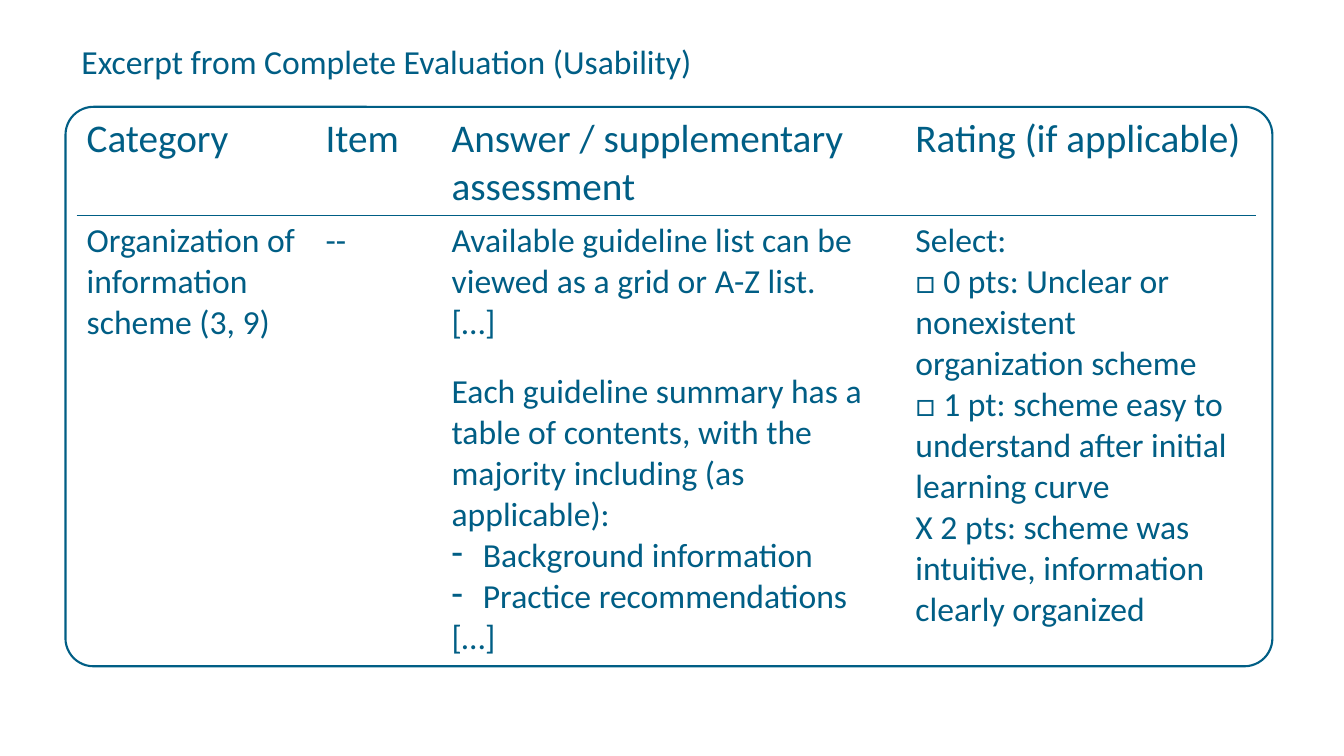
import pptx
import pptx.dml.color
import pptx.enum.shapes
import pptx.enum.text
import pptx.oxml
import pptx.oxml.ns
import pptx.util
from lxml import etree

Inches, Pt = pptx.util.Inches, pptx.util.Pt
COLORS = {"teal": "005E85"}
FONT = "Calibri"
NO_GRID_STYLE = "{2D5ABB26-0587-4C30-8999-92F81FD0307C}"
COLUMN_WIDTHS = [2.37, 1.25, 4.6, 3.48]
ROW_HEIGHTS = [1.02, 4.46]
TEXT_SIZES = [28, 24]
SECTION_GAP = {"space_before": Pt(20)}
HEADERS = ["Category", "Item", "Answer / supplementary assessment", "Rating (if applicable)"]
EVALUATION = [
    ["Organization of information scheme (3, 9)"],
    ["--"],
    [
        "Available guideline list can be viewed as a grid or A-Z list.",
        "[…]",
        ("Each guideline summary has a table of contents, with the majority "
         "including (as applicable):", SECTION_GAP),
        "- Background information",
        "- Practice recommendations",
        "[…]",
    ],
    [
        "Select:",
        "□ 0 pts: Unclear or nonexistent organization scheme",
        "□ 1 pt: scheme easy to understand after initial learning curve",
        "X 2 pts: scheme was intuitive, information clearly organized",
    ],
]


def rgb(name):
    return pptx.dml.color.RGBColor.from_string(COLORS[name])


def set_attributes(target, values):
    for name, value in values.items():
        setattr(target, name, value)


def add_dash_bullet(paragraph):
    properties = paragraph._p.get_or_add_pPr()
    properties.set("marL", str(Inches(0.31)))
    properties.set("indent", str(-Inches(0.31)))
    bullet = etree.SubElement(properties, pptx.oxml.ns.qn("a:buChar"))
    bullet.set("char", "-")


def write_paragraphs(text_frame, entries, size):
    """Write entries, each a string or a (string, paragraph format) pair."""
    for index, entry in enumerate(entries):
        text, formats = entry if isinstance(entry, tuple) else (entry, {})
        paragraph = text_frame.add_paragraph() if index else text_frame.paragraphs[0]
        set_attributes(paragraph, formats)
        if text.startswith("- "):
            add_dash_bullet(paragraph)
            text = text[2:]
        run = paragraph.add_run()
        run.text = text
        set_attributes(run.font, {"name": FONT, "size": Pt(size)})
        run.font.color.rgb = rgb("teal")


def add_cell_border(cell, side):
    """Draw one edge of a cell; side is lnT or lnB."""
    border = pptx.oxml.parse_xml(
        f'<a:{side} {pptx.oxml.ns.nsdecls("a")} w="{Pt(1)}"><a:solidFill>'
        f'<a:srgbClr val="{COLORS["teal"]}"/></a:solidFill></a:{side}>'
    )
    cell._tc.get_or_add_tcPr().insert(0, border)


def add_title(slide, left, top, width, height):
    frame = slide.shapes.add_textbox(
        Inches(left), Inches(top), Inches(width), Inches(height)).text_frame
    set_attributes(frame, {
        "word_wrap": True,
        "vertical_anchor": pptx.enum.text.MSO_ANCHOR.TOP,
    })
    title = "Excerpt from Complete Evaluation (Usability)"
    write_paragraphs(frame, [(title, {"line_spacing": 0.9})], 24)


def add_evaluation_table(slide, left, top):
    graphic_frame = slide.shapes.add_table(
        len(ROW_HEIGHTS), len(COLUMN_WIDTHS), Inches(left), Inches(top),
        Inches(sum(COLUMN_WIDTHS)), Inches(sum(ROW_HEIGHTS)))
    table = graphic_frame.table
    set_attributes(table, {"first_row": False, "horz_banding": False})
    table._tbl.tblPr.find(pptx.oxml.ns.qn("a:tableStyleId")).text = NO_GRID_STYLE
    for column, width in zip(table.columns, COLUMN_WIDTHS):
        column.width = Inches(width)
    contents = [[[header] for header in HEADERS], EVALUATION]
    for row_index, entries_by_column in enumerate(contents):
        table.rows[row_index].height = Inches(ROW_HEIGHTS[row_index])
        for column_index, entries in enumerate(entries_by_column):
            cell = table.cell(row_index, column_index)
            cell.fill.background()
            add_cell_border(cell, "lnT" if row_index else "lnB")
            write_paragraphs(cell.text_frame, entries, TEXT_SIZES[row_index])


def add_evaluation_card(slide, left, top, width, height):
    """Draw the rounded frame and the table inside it."""
    card = slide.shapes.add_shape(
        pptx.enum.shapes.MSO_SHAPE.ROUNDED_RECTANGLE,
        Inches(left), Inches(top), Inches(width), Inches(height))
    card.adjustments[0] = 0.05
    card.shadow.inherit = False
    card.fill.background()
    card.line.color.rgb = rgb("teal")
    card.line.width = Pt(1.5)
    add_evaluation_table(slide, left + 0.11, top + 0.03)


def main():
    presentation = pptx.Presentation()
    set_attributes(presentation, {"slide_width": Inches(13.33), "slide_height": Inches(7.5)})
    slide = presentation.slides.add_slide(presentation.slide_layouts[6])
    add_evaluation_card(slide, 0.65, 1.06, 11.97, 5.55)
    add_title(slide, 0.71, 0.4, 11.7, 0.52)
    presentation.save("out.pptx")


if __name__ == "__main__":
    main()
